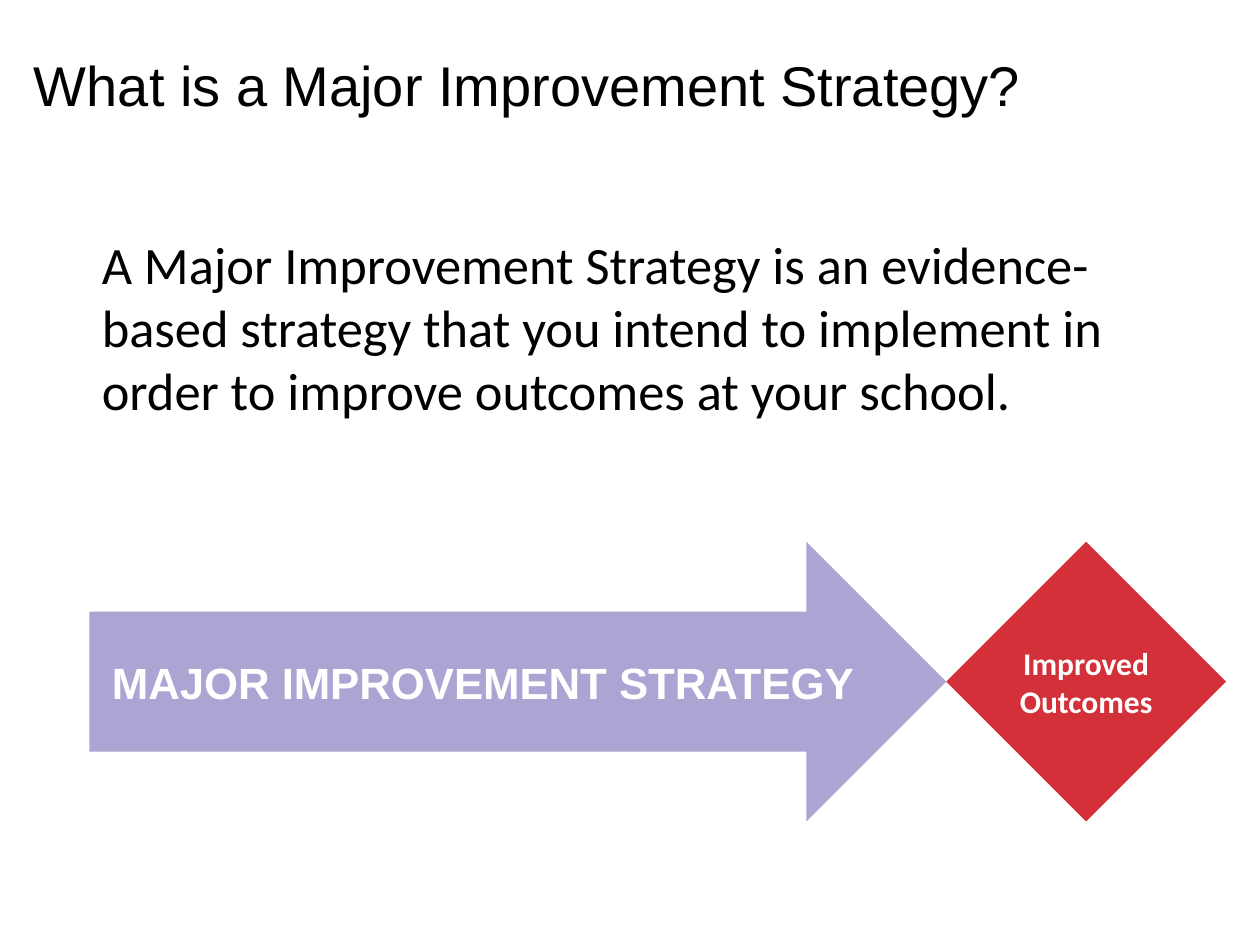
from pptx import Presentation
from pptx.dml.color import RGBColor
from pptx.enum.shapes import MSO_SHAPE
from pptx.enum.text import MSO_ANCHOR, PP_ALIGN
from pptx.util import Inches, Pt

# Layout in inches: one left margin and one band height shared by the parts
WIDTH, HEIGHT = 10, 7.5
LEFT = 0.71
BAND_TOP, BAND = 4.3, 2.22
ARROW_WIDTH = 6.8


def color(hex_code):
    return RGBColor.from_string(hex_code)


def write(sp, text, size, font="Calibri", fill="000000", bold=False,
          align=PP_ALIGN.LEFT, anchor=MSO_ANCHOR.TOP, pad_x=0.1, pad_y=0.1):
    tf = sp.text_frame
    tf.word_wrap = True
    tf.vertical_anchor = anchor
    tf.margin_left = tf.margin_right = Inches(pad_x)
    tf.margin_top = tf.margin_bottom = Inches(pad_y)
    p = tf.paragraphs[0]
    p.alignment = align
    r = p.add_run()
    r.text = text
    r.font.name, r.font.size, r.font.bold = font, Pt(size), bold
    r.font.color.rgb = color(fill)


def add_text(s, box, text, size, **fmt):
    sp = s.shapes.add_textbox(*map(Inches, box))
    write(sp, text, size, **fmt)


def add_block(s, kind, box, fill, text, size, **fmt):
    sp = s.shapes.add_shape(kind, *map(Inches, box))
    sp.shadow.inherit = False
    sp.fill.solid()
    sp.fill.fore_color.rgb = color(fill)
    sp.line.fill.background()
    write(sp, text, size, fill="FFFFFF", bold=True,
          align=PP_ALIGN.CENTER, anchor=MSO_ANCHOR.MIDDLE, **fmt)


def main():
    prs = Presentation()
    prs.slide_width, prs.slide_height = Inches(WIDTH), Inches(HEIGHT)
    s = prs.slides.add_slide(prs.slide_layouts[6])

    # Title
    add_text(s, (0.27, 0.36, 8.7, 0.62), "What is a Major Improvement Strategy?",
             32, font="Arial", anchor=MSO_ANCHOR.MIDDLE, pad_x=0, pad_y=0)

    # Definition
    add_text(s, (LEFT, 1.74, 8.4, BAND),
             "A Major Improvement Strategy is an evidence-based strategy that you "
             "intend to implement in order to improve outcomes at your school.", 30)

    # Strategy arrow pointing at the outcomes
    add_block(s, MSO_SHAPE.RIGHT_ARROW, (LEFT, BAND_TOP, ARROW_WIDTH, BAND),
              "AAA5D2", "MAJOR IMPROVEMENT STRATEGY", 25, font="Arial")
    add_block(s, MSO_SHAPE.DIAMOND, (LEFT + ARROW_WIDTH, BAND_TOP, BAND, BAND),
              "D33039", "Improved Outcomes", 18, pad_x=0)

    prs.save("out.pptx")


if __name__ == "__main__":
    main()
